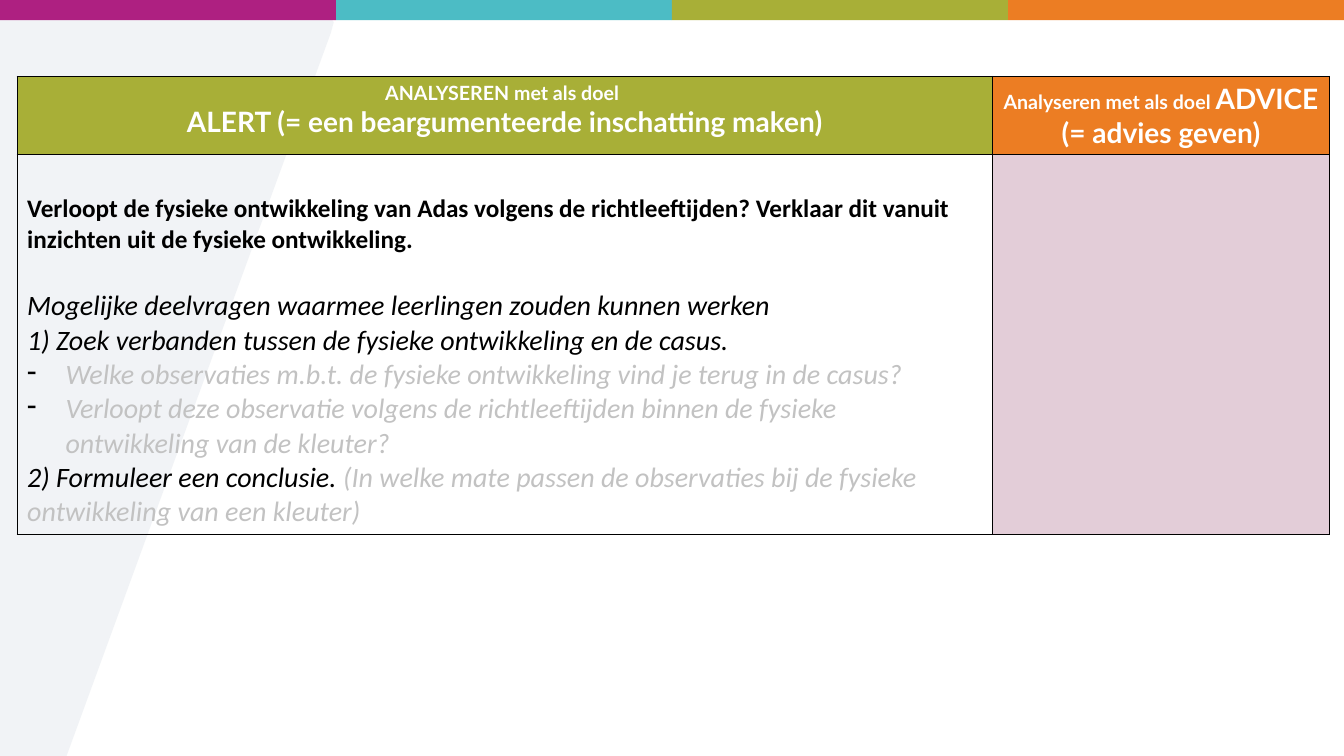
from lxml.etree import SubElement
from pptx import Presentation
from pptx.dml.color import RGBColor
from pptx.enum.shapes import MSO_SHAPE
from pptx.enum.text import PP_ALIGN
from pptx.oxml.ns import qn
from pptx.util import Inches, Pt

BLACK = RGBColor(0x00, 0x00, 0x00)
WHITE = RGBColor(0xFF, 0xFF, 0xFF)
HINT_GREY = RGBColor(0xC2, 0xC2, 0xC2)
PANEL_GREY = RGBColor(0xE8, 0xEC, 0xF0)
MAGENTA = RGBColor(0xAE, 0x20, 0x81)
TEAL = RGBColor(0x4C, 0xBC, 0xC5)
GREEN = RGBColor(0xA8, 0xAF, 0x37)
ORANGE = RGBColor(0xEC, 0x7D, 0x23)
PINK = RGBColor(0xE3, 0xCD, 0xD8)

SLIDE_WIDTH = 13.33
PANEL_OUTLINE = [(-0.01, 0.05), (3.09, 0.05), (3.24, 0.12), (3.31, 0.22),
                 (3.28, 0.33), (0.66, 7.5), (-0.01, 7.5)]

QUESTION = ("Verloopt de fysieke ontwikkeling van Adas volgens de richtleeftijden? "
            "Verklaar dit vanuit inzichten uit de fysieke ontwikkeling.")
SUBQUESTIONS_INTRO = "Mogelijke deelvragen waarmee leerlingen zouden kunnen werken"
STEP_ONE = "1) Zoek verbanden tussen\u00a0de fysieke ontwikkeling en de casus."
HINTS = [
    "Welke observaties m.b.t. de fysieke ontwikkeling\u00a0vind je terug in de casus?",
    "Verloopt deze observatie volgens de richtleeftijden binnen de fysieke "
    "ontwikkeling van de kleuter?",
]
STEP_TWO = "2) Formuleer een conclusie. "
STEP_TWO_HINT = ("(In welke mate passen de observaties bij de fysieke "
                 "ontwikkeling van een kleuter)")


def style_font(font, name, size, color, bold=False, italic=False):
    font.name = name
    font.size = Pt(size)
    font.color.rgb = color
    font.bold = bold
    font.italic = italic


def add_run(paragraph, text, *style, **emphasis):
    run = paragraph.add_run()
    run.text = text
    style_font(run.font, *style, **emphasis)


def add_slanted_panel(slide):
    points = [(Inches(x), Inches(y)) for x, y in PANEL_OUTLINE]
    builder = slide.shapes.build_freeform(*points[0])
    builder.add_line_segments(points[1:], close=True)
    panel = builder.convert_to_shape()
    panel.shadow.inherit = False
    panel.line.fill.background()
    panel.fill.solid()
    panel.fill.fore_color.rgb = PANEL_GREY
    color = panel.fill._xPr.find(qn("a:solidFill"))[0]
    SubElement(color, qn("a:alpha"), val="59000")


def add_color_band(slide):
    colors = [MAGENTA, TEAL, GREEN, ORANGE]
    width = SLIDE_WIDTH / len(colors)
    for index, color in enumerate(colors):
        block = slide.shapes.add_shape(MSO_SHAPE.RECTANGLE, Inches(index * width), 0,
                                       Inches(width), Inches(0.2))
        block.shadow.inherit = False
        block.line.fill.background()
        block.fill.solid()
        block.fill.fore_color.rgb = color


def format_cell(cell, color=None):
    """Give the cell black borders and its fill, or no fill without a color."""
    properties = cell._tc.get_or_add_tcPr()
    for side in ("a:lnL", "a:lnR", "a:lnT", "a:lnB"):
        border = SubElement(properties, qn(side), w=str(Pt(1)))
        border_fill = SubElement(border, qn("a:solidFill"))
        SubElement(border_fill, qn("a:srgbClr"), val=str(BLACK))
    if color is None:
        cell.fill.background()
    else:
        cell.fill.solid()
        cell.fill.fore_color.rgb = color


def add_heading(cell, lead, goal, break_after_lead=False):
    paragraph = cell.text_frame.paragraphs[0]
    paragraph.alignment = PP_ALIGN.CENTER
    paragraph.font.size = Pt(14)
    add_run(paragraph, lead, "Lato", 14, WHITE, bold=True)
    if break_after_lead:
        paragraph.add_line_break()
    add_run(paragraph, goal, "Lato", 20, WHITE, bold=True)


def add_dash(paragraph):
    properties = paragraph._p.get_or_add_pPr()
    properties.set("marL", str(Inches(0.38)))
    properties.set("indent", str(Inches(-0.38)))
    bullet_color = SubElement(properties, qn("a:buClr"))
    SubElement(bullet_color, qn("a:srgbClr"), val=str(BLACK))
    SubElement(properties, qn("a:buChar"), char="-")


def fill_assignment(cell):
    cell.margin_top = Inches(0.39)
    frame = cell.text_frame
    add_run(frame.paragraphs[0], QUESTION, "Calibri", 18, BLACK, bold=True)

    intro = frame.add_paragraph()
    intro.space_before = Pt(24.4)
    add_run(intro, SUBQUESTIONS_INTRO, "Calibri", 20, BLACK, italic=True)
    add_run(frame.add_paragraph(), STEP_ONE, "Calibri", 20, BLACK, italic=True)

    for hint in HINTS:
        paragraph = frame.add_paragraph()
        add_dash(paragraph)
        add_run(paragraph, hint, "Calibri", 20, HINT_GREY, italic=True)

    conclusion = frame.add_paragraph()
    add_run(conclusion, STEP_TWO, "Calibri", 20, BLACK, italic=True)
    add_run(conclusion, STEP_TWO_HINT, "Calibri", 20, HINT_GREY, italic=True)


def add_assignment_table(slide):
    table = slide.shapes.add_table(2, 2, Inches(0.17), Inches(0.76),
                                   Inches(13.02), Inches(4.54)).table
    table.first_row = False
    table.horz_banding = False
    for column, width in zip(table.columns, (9.67, 3.35)):
        column.width = Inches(width)
    for row, height in zip(table.rows, (0.77, 3.77)):
        row.height = Inches(height)
    for cell, color in zip(table.iter_cells(), (GREEN, ORANGE, None, PINK)):
        format_cell(cell, color)

    add_heading(table.cell(0, 0), "ANALYSEREN met als doel ",
                "ALERT (= een beargumenteerde inschatting maken)", break_after_lead=True)
    add_heading(table.cell(0, 1), "Analyseren met als doel ", "ADVICE (= advies geven)")
    fill_assignment(table.cell(1, 0))


def main():
    presentation = Presentation()
    presentation.slide_width = Inches(SLIDE_WIDTH)
    presentation.slide_height = Inches(7.5)
    slide = presentation.slides.add_slide(presentation.slide_layouts[6])
    add_slanted_panel(slide)
    add_color_band(slide)
    add_assignment_table(slide)
    presentation.save("out.pptx")


if __name__ == "__main__":
    main()
